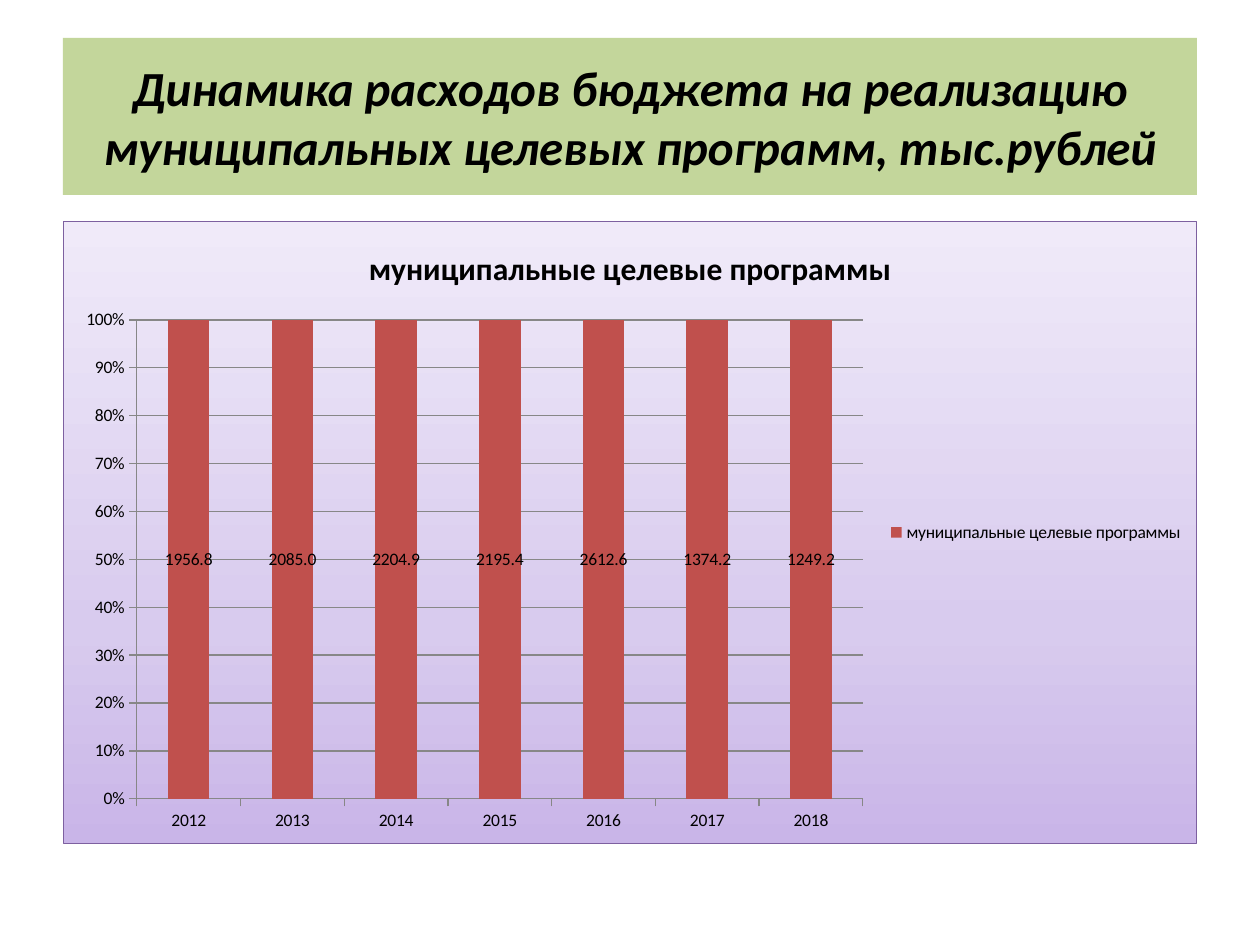
from lxml.etree import fromstring
from pptx import Presentation
from pptx.chart.data import CategoryChartData
from pptx.dml.color import RGBColor
from pptx.enum.chart import XL_CHART_TYPE, XL_LABEL_POSITION, XL_LEGEND_POSITION, XL_TICK_MARK
from pptx.enum.shapes import MSO_SHAPE
from pptx.enum.text import MSO_ANCHOR, PP_ALIGN
from pptx.util import Emu, Pt

FONT = "Calibri"
HEADING = "Динамика расходов бюджета на реализацию муниципальных целевых программ, тыс.рублей"
PROGRAMMES = "муниципальные целевые программы"
EXPENSES = {
    "2012": 1956.8, "2013": 2085.0, "2014": 2204.9, "2015": 2195.4,
    "2016": 2612.6, "2017": 1374.2, "2018": 1249.2,
}
GRADIENT = [(0, "C9B5E8"), (35, "D8CBEE"), (100, "F0EAF9")]


def px(length):
    """Turn whole pixels into EMU."""
    return Emu(round(length * 914400 / 126))


def color(value):
    """Turn a hex string into a colour."""
    return RGBColor.from_string(value)


def style_font(font, size, bold=False, italic=False):
    """Apply the black slide font."""
    font.name, font.size = FONT, Pt(size)
    font.bold, font.italic = bold, italic
    font.color.rgb = color("000000")


def style_line(line, value):
    """Give a line its colour and a thin width."""
    line.color.rgb = color(value)
    line.width = Pt(0.75)


def add_heading(slide, left, top, width, height):
    """Add the green heading band."""
    shape = slide.shapes.add_shape(
        MSO_SHAPE.RECTANGLE, px(left), px(top), px(width), px(height))
    shape.shadow.inherit = False
    shape.fill.solid()
    shape.fill.fore_color.rgb = color("C3D69B")
    shape.line.fill.background()
    text_frame = shape.text_frame
    text_frame.word_wrap = True
    text_frame.vertical_anchor = MSO_ANCHOR.MIDDLE
    text_frame.text = HEADING
    paragraph = text_frame.paragraphs[0]
    paragraph.alignment = PP_ALIGN.CENTER
    style_font(paragraph.runs[0].font, 28, bold=True, italic=True)


def fill_chart_area(chart):
    """Give the chart area its lilac gradient and border."""
    stops = "".join(
        f'<a:gs pos="{position * 1000}"><a:srgbClr val="{value}"/></a:gs>'
        for position, value in GRADIENT)
    properties = fromstring(
        '<c:spPr xmlns:c="http://schemas.openxmlformats.org/drawingml/2006/chart" '
        'xmlns:a="http://schemas.openxmlformats.org/drawingml/2006/main">'
        f'<a:gradFill><a:gsLst>{stops}</a:gsLst><a:lin ang="16200000" scaled="0"/></a:gradFill>'
        '<a:ln w="9525"><a:solidFill><a:srgbClr val="7D60A0"/></a:solidFill></a:ln></c:spPr>')
    chart.element.chart.addnext(properties)


def style_axes(chart):
    """Format both axes and the gridlines."""
    for axis in (chart.category_axis, chart.value_axis):
        axis.major_tick_mark = XL_TICK_MARK.OUTSIDE
        axis.minor_tick_mark = XL_TICK_MARK.NONE
        style_line(axis.format.line, "878787")
    value_axis = chart.value_axis
    value_axis.minimum_scale, value_axis.maximum_scale = 0, 1
    value_axis.major_unit = 0.1
    value_axis.tick_labels.number_format = "0%"
    value_axis.tick_labels.number_format_is_linked = False
    value_axis.has_major_gridlines = True
    style_line(value_axis.major_gridlines.format.line, "878787")


def style_columns(plot):
    """Format the columns and their value labels."""
    plot.gap_width, plot.overlap = 150, 100
    plot.vary_by_categories = False
    fill = plot.series[0].format.fill
    fill.solid()
    fill.fore_color.rgb = color("C0504D")
    plot.has_data_labels = True
    labels = plot.data_labels
    labels.show_value = True
    labels.number_format, labels.number_format_is_linked = "0.0", False
    labels.position = XL_LABEL_POSITION.CENTER
    style_font(labels.font, 10)


def add_expense_chart(slide, left, top, width, height):
    """Add the stacked chart of programme expenses."""
    data = CategoryChartData(number_format="0.0")
    data.categories = list(EXPENSES)
    data.add_series(PROGRAMMES, list(EXPENSES.values()))
    chart = slide.shapes.add_chart(
        XL_CHART_TYPE.COLUMN_STACKED_100,
        px(left), px(top), px(width), px(height), data).chart
    style_font(chart.font, 10)
    chart.has_title = True
    title = chart.chart_title.text_frame
    title.text = PROGRAMMES
    style_font(title.paragraphs[0].runs[0].font, 18, bold=True)
    chart.has_legend = True
    chart.legend.position = XL_LEGEND_POSITION.RIGHT
    chart.legend.include_in_layout = False
    style_axes(chart)
    style_columns(chart.plots[0])
    fill_chart_area(chart)


def main():
    """Build and save the slide."""
    presentation = Presentation()
    presentation.slide_width, presentation.slide_height = px(1260), px(945)
    slide = presentation.slides.add_slide(presentation.slide_layouts[6])
    add_heading(slide, 63, 38, 1134, 157)
    add_expense_chart(slide, 63, 221, 1134, 623)
    presentation.save("out.pptx")


if __name__ == "__main__":
    main()
